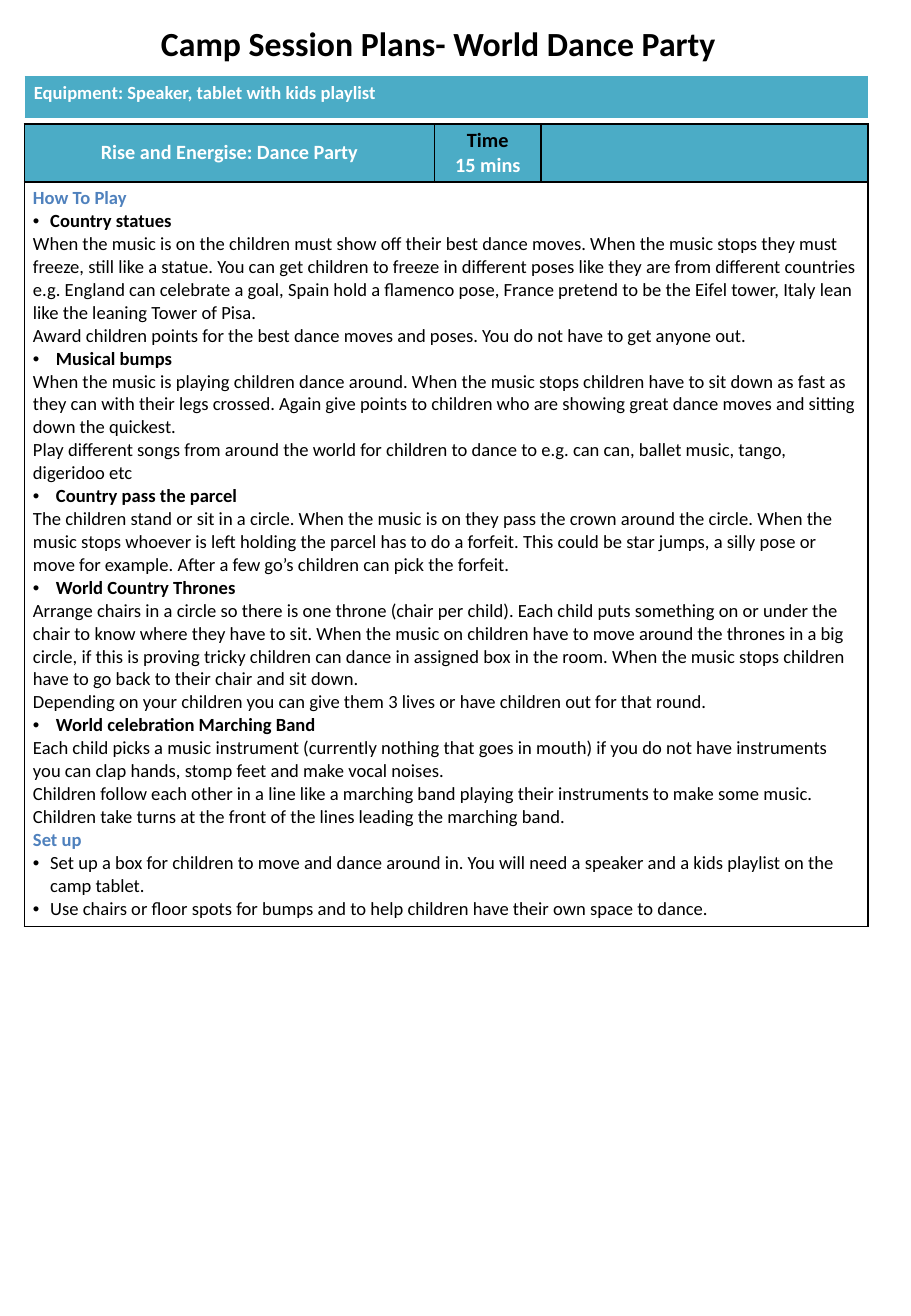
from lxml import etree
from pptx import Presentation
from pptx.dml.color import RGBColor
from pptx.enum.text import MSO_ANCHOR, PP_ALIGN
from pptx.oxml.ns import qn
from pptx.util import Cm, Pt

CENTER, LEFT = PP_ALIGN.CENTER, PP_ALIGN.LEFT
MIDDLE, TOP = MSO_ANCHOR.MIDDLE, MSO_ANCHOR.TOP
BLACK = RGBColor(0x00, 0x00, 0x00)
WHITE = RGBColor(0xFF, 0xFF, 0xFF)
TEAL = RGBColor(0x4B, 0xAC, 0xC6)
BLUE = RGBColor(0x4F, 0x81, 0xBD)
FONT = "Calibri"
NARROW, WIDE = Cm(0.36), Cm(0.48)

# Each game: bullet indent, name, instructions (a tuple holds lines of one paragraph)
GAMES = [
    (NARROW, "Country statues", [
        "When the music is on the children must show off their best dance moves. When the music stops they must freeze, still like a statue. You can get children to freeze in different poses like they are from different countries e.g. England can celebrate a goal, Spain hold a flamenco pose, France pretend to be the Eifel tower, Italy lean like the leaning Tower of Pisa.",
        "Award children points for the best dance moves and poses. You do not have to get anyone out."]),
    (WIDE, "Musical bumps", [
        "When the music is playing children dance around. When the music stops children have to sit down as fast as they can with their legs crossed. Again give points to children who are showing great dance moves and sitting down the quickest.",
        "Play different songs from around the world for children to dance to e.g. can can, ballet music, tango, digeridoo etc"]),
    (WIDE, "Country pass the parcel", [
        "The children stand or sit in a circle. When the music is on they pass the crown around the circle. When the music stops whoever is left holding the parcel has to do a forfeit. This could be star jumps, a silly pose or move for example. After a few go’s children can pick the forfeit."]),
    (WIDE, "World Country Thrones", [
        "Arrange chairs in a circle so there is one throne (chair per child). Each child puts something on or under the chair to know where they have to sit. When the music on children have to move around the thrones in a big circle, if this is proving tricky children can dance in assigned box in the room. When the music stops children have to go back to their chair and sit down.",
        "Depending on your children you can give them 3 lives or have children out for that round."]),
    (WIDE, "World celebration Marching Band", [
        ("Each child picks a music instrument (currently nothing that goes in mouth) if you do not have instruments you can clap hands, stomp feet and make vocal noises.",
         "Children follow each other in a line like a marching band playing their instruments to make some music. Children take turns at the front of the lines leading the marching band.")]),
]
SET_UP = [
    "Set up a box for children to move and dance around in. You will need a speaker and a kids playlist on the camp tablet.",
    "Use chairs or floor spots for bumps and to help children have their own space to dance.",
]


def add_para(frame, text, size, color=BLACK, bold=False, align=LEFT, bullet=None):
    """Fill the empty first paragraph or add one; bullet is a hanging indent."""
    first = frame.paragraphs[0]
    para = first if not first.runs else frame.add_paragraph()
    para.alignment = align
    if bullet:
        props = para._p.get_or_add_pPr()
        props.set("marL", str(bullet))
        props.set("indent", str(-bullet))
        etree.SubElement(props, qn("a:buFont")).set("typeface", "Arial")
        etree.SubElement(props, qn("a:buChar")).set("char", "•")
    lines = text if isinstance(text, tuple) else (text,)
    for index, line in enumerate(lines):
        if index:
            para.add_line_break()
        span = para.add_run()
        span.text = line
        span.font.name = FONT
        span.font.size = Pt(size)
        span.font.bold = bold
        span.font.color.rgb = color


def style_cell(cell, border, fill, anchor):
    cell.margin_left = cell.margin_right = Cm(0.18)
    cell.margin_top = cell.margin_bottom = Cm(0.1)
    cell.vertical_anchor = anchor
    props = cell._tc.get_or_add_tcPr()
    for side in ("lnL", "lnR", "lnT", "lnB"):
        line = etree.SubElement(props, qn("a:" + side), w=str(Pt(1)))
        solid = etree.SubElement(line, qn("a:solidFill"))
        etree.SubElement(solid, qn("a:srgbClr"), val=str(border))
    if fill is None:
        cell.fill.background()
    else:
        cell.fill.solid()
        cell.fill.fore_color.rgb = fill


def add_plain_table(page, left, top, widths, heights):
    table = page.shapes.add_table(len(heights), len(widths), left, top,
                                  sum(widths), sum(heights)).table
    table.first_row = table.horz_banding = False
    for column, width in zip(table.columns, widths):
        column.width = width
    for row, height in zip(table.rows, heights):
        row.height = height
    return table


def add_title(page, left, top, width, height):
    frame = page.shapes.add_textbox(left, top, width, height).text_frame
    frame.word_wrap = True
    add_para(frame, "Camp Session Plans- World Dance Party", 20, bold=True, align=CENTER)


def add_equipment(page, left, top, width, height):
    cell = add_plain_table(page, left, top, [width], [height]).cell(0, 0)
    style_cell(cell, TEAL, TEAL, TOP)
    add_para(cell.text_frame, "Equipment: Speaker, tablet with kids playlist", 11, WHITE, True)


def add_instructions(frame):
    add_para(frame, "How To Play", 11, BLUE, True)
    for indent, name, steps in GAMES:
        add_para(frame, name, 11, bold=True, bullet=indent)
        for step in steps:
            add_para(frame, step, 11)
    add_para(frame, "Set up", 11, BLUE, True)
    for item in SET_UP:
        add_para(frame, item, 11, bullet=NARROW)


def add_session(page, left, top, width, height):
    name_width, time_width, header_height = Cm(8.58), Cm(2.22), Cm(1.2)
    table = add_plain_table(page, left, top,
                            [name_width, time_width, width - name_width - time_width],
                            [header_height, height - header_height])
    for column in range(3):
        style_cell(table.cell(0, column), BLACK, TEAL, MIDDLE)
        style_cell(table.cell(1, column), BLACK, None, TOP)
    table.cell(1, 0).merge(table.cell(1, 2))
    add_para(table.cell(0, 0).text_frame, "Rise and Energise: Dance Party", 12, WHITE, True, CENTER)
    time = table.cell(0, 1).text_frame
    add_para(time, "Time", 12, BLACK, True, CENTER)
    add_para(time, "15 mins", 12, WHITE, True, CENTER)
    add_instructions(table.cell(1, 0).text_frame)


def main():
    deck = Presentation()
    deck.slide_width, deck.slide_height = Cm(19.05), Cm(27.51)
    page = deck.slides.add_slide(deck.slide_layouts[6])
    add_title(page, Cm(0.38), Cm(0.36), Cm(17.58), Cm(1.12))
    add_session(page, Cm(0.51), Cm(2.59), Cm(17.64), Cm(16.76))
    add_equipment(page, Cm(0.53), Cm(1.6), Cm(17.6), Cm(0.86))
    deck.save("out.pptx")


if __name__ == "__main__":
    main()
